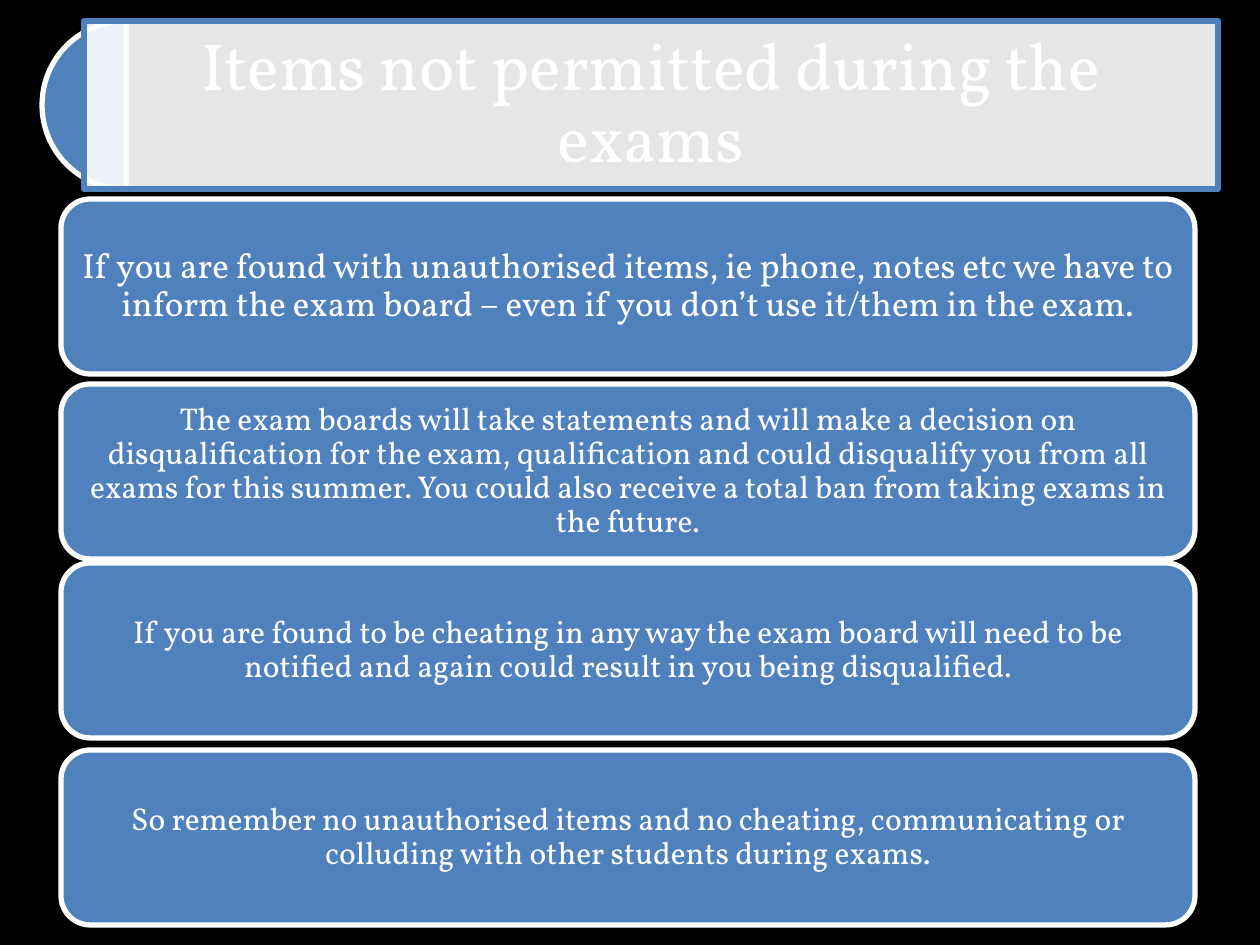
from lxml import etree
from pptx import Presentation
from pptx.dml.color import RGBColor
from pptx.enum.shapes import MSO_SHAPE
from pptx.enum.text import MSO_ANCHOR, PP_ALIGN
from pptx.oxml.ns import qn
from pptx.util import Pt

PX = 914400 / 126
ROUNDED, RECTANGLE, PIE = MSO_SHAPE.ROUNDED_RECTANGLE, MSO_SHAPE.RECTANGLE, MSO_SHAPE.PIE
MIDDLE, CENTER = MSO_ANCHOR.MIDDLE, PP_ALIGN.CENTER
COLORS = {"background": "000000", "blue": "4F81BD", "white": "FFFFFF"}
FONT = "Vollkorn"

RULES = [
    (199, 20, "If you are found with unauthorised items, ie phone, notes etc we have to inform "
              "the exam board – even if you don’t use it/them in the exam."),
    (384, 18, "The exam boards will take statements and will make a decision on disqualification "
              "for the exam, qualification and could disqualify you from all exams for this summer. "
              "You could also receive a total ban from taking exams in the future."),
    (563, 18, "If you are found to be cheating in any way the exam board will need to be notified "
              "and again could result in you being disqualified."),
    (750, 18, "So remember no unauthorised items and no cheating, communicating or colluding with "
              "other students during exams."),
]


def emu(length):
    return round(length * PX)


def color(name):
    return RGBColor.from_string(COLORS[name])


def add_panel(page, kind, box, fill, line):
    panel = page.shapes.add_shape(kind, *map(emu, box))
    panel.shadow.inherit = False
    panel.fill.solid()
    panel.fill.fore_color.rgb = color(fill)
    panel.line.color.rgb = color(line)
    panel.line.width = Pt(3)
    return panel


def set_opacity(panel, percent):
    fill_color = panel._element.spPr.find(qn("a:solidFill"))[0]
    etree.SubElement(fill_color, qn("a:alpha"), val=str(percent * 1000))


def write_text(panel, text, size, inset):
    frame = panel.text_frame
    frame.word_wrap = True
    frame.vertical_anchor = MIDDLE
    frame.margin_left = frame.margin_right = emu(inset)
    frame.margin_top = frame.margin_bottom = emu(inset)
    para = frame.paragraphs[0]
    para.alignment = CENTER
    para.line_spacing = 0.9
    span = para.add_run()
    span.text = text
    span.font.name = FONT
    span.font.size = Pt(size)
    span.font.color.rgb = color("white")


def add_title(page, box, text):
    left, top, width, height = box
    half_disc = add_panel(page, PIE, (left, top, height, height), "blue", "white")
    half_disc.adjustments[0] = 54
    half_disc.adjustments[1] = 162
    indent = height // 4
    banner = add_panel(page, RECTANGLE, (left + indent, top, width - indent, height), "white", "blue")
    set_opacity(banner, 90)
    write_text(banner, text, size=38, inset=20)


def add_rules(page, box, rules):
    left, top, width, height = box
    for offset, size, text in rules:
        card = add_panel(page, ROUNDED, (left, top + offset, width, height), "blue", "white")
        write_text(card, text, size=size, inset=size // 2)


def main():
    deck = Presentation()
    deck.slide_width, deck.slide_height = emu(1260), emu(945)
    page = deck.slides.add_slide(deck.slide_layouts[6])
    page.background.fill.solid()
    page.background.fill.fore_color.rgb = color("background")
    add_rules(page, (61, 0, 1134, 175), RULES)
    add_title(page, (42, 21, 1176, 168), "Items not permitted during the exams")
    deck.save("out.pptx")


if __name__ == "__main__":
    main()
